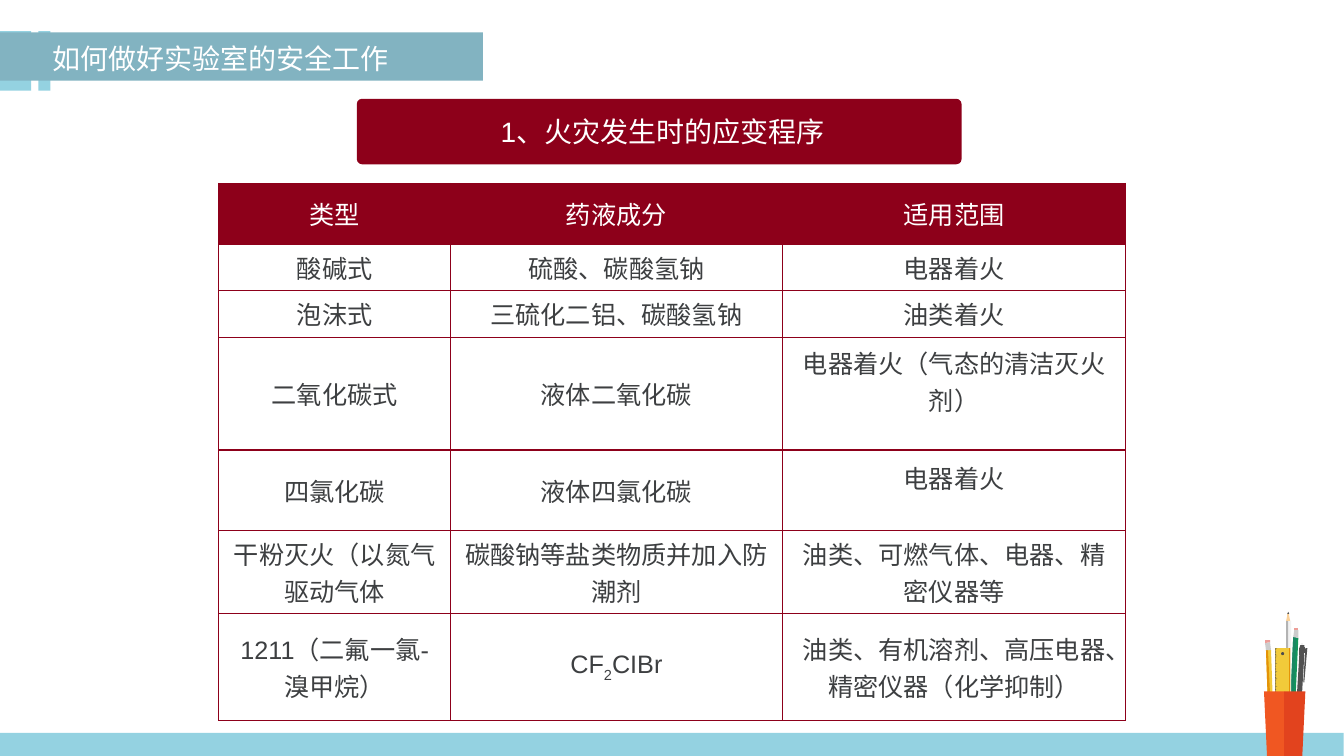
from lxml import etree
from pptx import Presentation
from pptx.dml.color import RGBColor
from pptx.enum.shapes import MSO_SHAPE
from pptx.enum.text import MSO_ANCHOR, MSO_AUTO_SIZE, PP_ALIGN
from pptx.oxml.ns import qn
from pptx.util import Pt

RECT, ROUND, OVAL = MSO_SHAPE.RECTANGLE, MSO_SHAPE.ROUNDED_RECTANGLE, MSO_SHAPE.OVAL
MIDDLE, CENTER, JUSTIFY = MSO_ANCHOR.MIDDLE, PP_ALIGN.CENTER, PP_ALIGN.JUSTIFY
PX = 9144  # EMU per px, 100 px to the inch
FONT = "Arial"

WHITE = RGBColor(0xFF, 0xFF, 0xFF)
MAROON = RGBColor(0x8D, 0x00, 0x1A)
INK = RGBColor(0x3D, 0x3F, 0x41)
SKY = RGBColor(0x94, 0xD2, 0xE1)
TEAL = RGBColor(0x82, 0xB3, 0xC1)
GREEN = RGBColor(0x13, 0x95, 0x5C)
DEEP_GREEN = RGBColor(0x1A, 0x87, 0x63)
WOOD = RGBColor(0xFB, 0xD1, 0x99)
LEAD = RGBColor(0x4D, 0x4D, 0x4D)
METAL = RGBColor(0xCC, 0xCC, 0xCC)
ERASER = RGBColor(0xED, 0x9D, 0x97)
PALE = RGBColor(0xF2, 0xF2, 0xF2)
GREY = RGBColor(0xB3, 0xB3, 0xB3)
YELLOW = RGBColor(0xF1, 0xCA, 0x3A)
AMBER = RGBColor(0xE4, 0x93, 0x07)
PEN = RGBColor(0x52, 0x52, 0x52)
RED = RGBColor(0xE2, 0x43, 0x1E)
ORANGE = RGBColor(0xF0, 0x57, 0x22)

TITLE = "如何做好实验室的安全工作"
CAPTION = "1、火灾发生时的应变程序"
ROWS = [
    ("类型", "药液成分", "适用范围"),
    ("酸碱式", "硫酸、碳酸氢钠", "电器着火"),
    ("泡沫式", "三硫化二铝、碳酸氢钠", "油类着火"),
    ("二氧化碳式", "液体二氧化碳", "电器着火（气态的清洁灭火剂）"),
    ("四氯化碳", "液体四氯化碳", "电器着火"),
    ("干粉灭火（以氮气驱动气体", "碳酸钠等盐类物质并加入防潮剂", "油类、可燃气体、电器、精密仪器等"),
    ("1211（二氟一氯-溴甲烷）", ("CF", "2", "CIBr"), "油类、有机溶剂、高压电器、精密仪器（化学抑制）"),
]
COL_WIDTHS = [230, 329, 341]
ROW_HEIGHTS = [60, 42, 42, 112, 80, 74, 106]
RAISED_CELLS = {(3, 2), (4, 2)}  # text sits above the middle

BANDS = [
    (SKY, (0, 727, 1333, 23)),
    (SKY, (0, 31, 31, 59)),
    (SKY, (38, 31, 12, 59)),
    (TEAL, (0, 32, 479, 48)),
]
# Four numbers are left, top, width, height; more are the corners of an outline.
PENCILS = [
    (GREEN, (1288, 633, 1284, 719, 1279, 718, 1283, 632)),
    (DEEP_GREEN, (1283, 632, 1286, 632, 1282, 719, 1279, 718)),
    (METAL, (1283, 632, 1288, 633, 1288, 625, 1284, 625)),
    (ERASER, (1288, 625, 1284, 625, 1284, 623, 1288, 623)),
    (PALE, (1276, 616, 5, 86)),
    (GREY, (1276, 616, 2, 86)),
    (WOOD, (1277, 611, 1276, 616, 1280, 616, 1279, 611, 1279, 609, 1277, 609)),
    (LEAD, (1277, 609, 1279, 609, 1278, 607)),
    (YELLOW, (1261, 645, 1264, 731, 1259, 731, 1256, 645)),
    (AMBER, (1256, 645, 1258, 645, 1262, 731, 1259, 731)),
    (METAL, (1256, 645, 1261, 645, 1260, 637, 1255, 638)),
    (ERASER, (1260, 637, 1255, 638, 1255, 635, 1260, 635)),
    (PALE, (1293, 638, 1293, 643, 1291, 643, 1291, 638)),
    (PEN, (1294, 650, 1289, 734, 1284, 734, 1289, 650)),
    (PEN, (1289, 650, 1294, 650, 1294, 643, 1289, 643)),
    (PEN, (1294, 643, 1289, 643, 1290, 640, 1294, 640)),
    (PEN, (1295, 642, 1295, 648, 1294, 648, 1294, 642)),
    (PEN, (1297, 643, 1294, 677, 1293, 677, 1295, 643)),
    (YELLOW, (1265, 643, 15, 77)),
    (AMBER, (1279, 643, 1, 77)),
]
CUP = [
    (ORANGE, (1254, 686, 1257, 750, 1274, 750, 1274, 686)),
    (RED, (1295, 686, 1274, 686, 1274, 750, 1292, 750)),
]
RULER_LEFT, RULER_TOP, RULER_BOTTOM = 1265, 643, 719
TICKS, HAIRLINE = 50, 0.3


def px(n):
    return round(n * PX)


def add_box(shapes, color, box, kind=RECT):
    sp = shapes.add_shape(kind, *map(px, box))
    paint(sp, color)
    return sp


def paint(sp, color):
    sp.shadow.inherit = False
    sp.fill.solid()
    sp.fill.fore_color.rgb = color
    sp.line.fill.background()


def add_parts(shapes, parts):
    for color, nums in parts:
        if len(nums) == 4:
            add_box(shapes, color, nums)
            continue
        corners = list(zip(nums[::2], nums[1::2]))
        outline = shapes.build_freeform(*corners[0], scale=PX)
        outline.add_line_segments(corners[1:], close=True)
        paint(outline.convert_to_shape(), color)


def add_ruler_marks(shapes):
    add_box(shapes, LEAD, (1271, 647, 3, 3), OVAL)
    add_box(shapes, LEAD, (RULER_LEFT, RULER_TOP, HAIRLINE, RULER_BOTTOM - RULER_TOP))
    step = (RULER_BOTTOM - RULER_TOP) / TICKS
    for i in range(TICKS + 1):
        length = 2 if i % 5 == 0 else 1
        add_box(shapes, LEAD, (RULER_LEFT, RULER_BOTTOM - i * step, length, HAIRLINE))


def write(tf, runs, size, color, align=CENTER):
    p = tf.paragraphs[0]
    p.alignment = align
    for text in runs:
        r = p.add_run()
        r.text = text
        for name, value in {"name": FONT, "size": Pt(size), "bold": False}.items():
            setattr(r.font, name, value)
        r.font.color.rgb = color
    return p


def add_borders(cell):
    tc_pr = cell._tc.get_or_add_tcPr()
    for i, side in enumerate(("lnL", "lnR", "lnT", "lnB")):
        ln = etree.Element(qn("a:" + side), w=str(Pt(1)))
        fill = etree.SubElement(ln, qn("a:solidFill"))
        etree.SubElement(fill, qn("a:srgbClr"), val=str(MAROON))
        tc_pr.insert(i, ln)


def add_extinguisher_table(shapes):
    box = (217, 182, sum(COL_WIDTHS), sum(ROW_HEIGHTS))
    table = shapes.add_table(len(ROWS), len(COL_WIDTHS), *map(px, box)).table
    table.first_row = table.horz_banding = False
    for col, width in zip(table.columns, COL_WIDTHS):
        col.width = px(width)
    for i, (row, height) in enumerate(zip(ROWS, ROW_HEIGHTS)):
        table.rows[i].height = px(height)
        for j, content in enumerate(row):
            cell = table.cell(i, j)
            cell.vertical_anchor = MIDDLE
            if i == 0:
                cell.fill.solid()
                cell.fill.fore_color.rgb = MAROON
            else:
                cell.fill.background()
            if (i, j) in RAISED_CELLS:
                cell.margin_bottom = px(30)
            runs = [content] if isinstance(content, str) else content
            p = write(cell.text_frame, runs, 18, INK if i else WHITE)
            if len(runs) > 1:
                p.runs[1].font._element.set("baseline", "-25000")
            add_borders(cell)


def main():
    prs = Presentation()
    prs.slide_height = px(750)
    prs.slide_width = px(750 * 16 / 9)
    s = prs.slides.add_slide(prs.slide_layouts[5])
    shapes = s.shapes

    add_parts(shapes, BANDS)
    art = shapes.add_group_shape().shapes
    add_parts(art, PENCILS)
    add_ruler_marks(art)
    add_parts(art, CUP)

    title = shapes.title
    title.left, title.top, title.width, title.height = map(px, (42, 32, 392, 48))
    shapes.element.append(title.element)  # bring in front of the band
    tf = title.text_frame
    for name, value in {"auto_size": MSO_AUTO_SIZE.NONE, "vertical_anchor": MIDDLE, "word_wrap": True}.items():
        setattr(tf, name, value)
    write(tf, [TITLE], 20, WHITE, JUSTIFY).line_spacing = 1.1

    caption = add_box(shapes, MAROON, (354, 98, 600, 65), ROUND)
    caption.adjustments[0] = 0.08
    caption.text_frame.vertical_anchor = MIDDLE
    caption.text_frame.margin_left = px(17)
    write(caption.text_frame, [CAPTION], 20, WHITE)

    add_extinguisher_table(shapes)
    prs.save("out.pptx")


if __name__ == "__main__":
    main()
